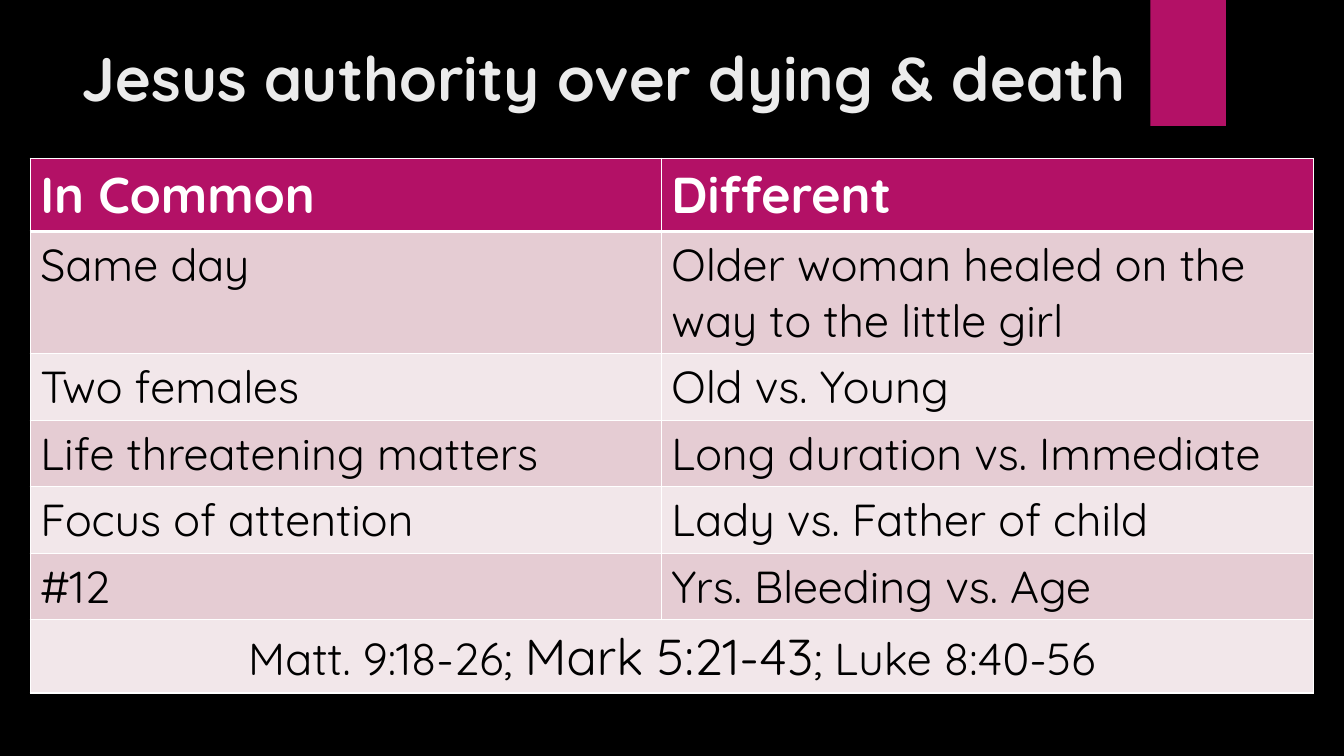
from lxml import etree
from pptx import Presentation
from pptx.dml.color import RGBColor
from pptx.enum.shapes import MSO_SHAPE
from pptx.enum.text import MSO_ANCHOR, PP_ALIGN
from pptx.oxml.ns import qn
from pptx.util import Inches, Pt

RECT = MSO_SHAPE.RECTANGLE
TOP = MSO_ANCHOR.TOP
LEFT, CENTER = PP_ALIGN.LEFT, PP_ALIGN.CENTER

FONT = "Quicksand"
COLORS = {
    "back": "000000", "title": "EBEBEB", "accent": "B31166", "white": "FFFFFF",
    "text": "000000", "dark": "E5CCD3", "light": "F2E7EA",
}
TITLE = "Jesus authority over dying & death"
HEADS = ("In Common", "Different")
PAIRS = [
    ("Same day", "Older woman healed on the way to the little girl"),
    ("Two females", "Old vs. Young"),
    ("Life threatening matters", "Long duration vs. Immediate"),
    ("Focus of attention", "Lady vs. Father of child"),
    ("#12", "Yrs. Bleeding vs. Age"),
]
VERSES = [("Matt. 9:18-26; ", 32), ("Mark 5:21-43", 36), ("; Luke 8:40-56", 32)]
WIDTHS = (6.26, 6.47)
HEIGHTS = (0.72, 1.21, 0.66, 0.66, 0.66, 0.66, 0.72)


def color(name):
    return RGBColor.from_string(COLORS[name])


def style(font, size, name, bold=False):
    font.name = FONT
    font.size = Pt(size)
    font.bold = bold
    font.color.rgb = color(name)


def border(cell, bottom):
    props = cell._tc.get_or_add_tcPr()
    for side, width in (("L", 1), ("R", 1), ("T", 1), ("B", bottom)):
        line = etree.SubElement(props, qn(f"a:ln{side}"), w=str(Pt(width)))
        fill = etree.SubElement(line, qn("a:solidFill"))
        etree.SubElement(fill, qn("a:srgbClr"), val=COLORS["white"])


def paint(cell, fill, bottom=1):
    border(cell, bottom)
    cell.fill.solid()
    cell.fill.fore_color.rgb = color(fill)


deck = Presentation()
deck.slide_width, deck.slide_height = Inches(13.33), Inches(7.5)
slide = deck.slides.add_slide(deck.slide_layouts[5])
slide.background.fill.solid()
slide.background.fill.fore_color.rgb = color("back")

tab = slide.shapes.add_shape(RECT, Inches(11.41), 0, Inches(0.75), Inches(1.25))
tab.shadow.inherit = False
tab.fill.solid()
tab.fill.fore_color.rgb = color("accent")
tab.line.fill.background()

title = slide.shapes.title
title.left, title.top = Inches(0.71), Inches(0.35)
title.width, title.height = Inches(10.71), Inches(1.53)
title.text_frame.text = TITLE
title.text_frame.vertical_anchor = TOP
title.text_frame.paragraphs[0].alignment = LEFT
style(title.text_frame.paragraphs[0].font, 44, "title", True)

rows = [HEADS, *PAIRS]
table = slide.shapes.add_table(
    len(HEIGHTS), len(WIDTHS), Inches(0.3), Inches(1.57),
    Inches(sum(WIDTHS)), Inches(sum(HEIGHTS))).table
for col, width in zip(table.columns, WIDTHS):
    col.width = Inches(width)
for row, height in zip(table.rows, HEIGHTS):
    row.height = Inches(height)

for r, row in enumerate(rows):
    head = r == 0
    for c, words in enumerate(row):
        cell = table.cell(r, c)
        cell.text = words
        para = cell.text_frame.paragraphs[0]
        if head:
            paint(cell, "accent", 3)
            style(para.font, 36, "white", True)
        else:
            paint(cell, "dark" if r % 2 else "light")
            style(para.font, 32, "text")

foot = table.cell(len(rows), 0)
last = table.cell(len(rows), 1)
foot.merge(last)
for cell in (foot, last):
    paint(cell, "light")
para = foot.text_frame.paragraphs[0]
para.alignment = CENTER
for words, size in VERSES:
    run = para.add_run()
    run.text = words
    style(run.font, size, "text")

deck.save("out.pptx")
